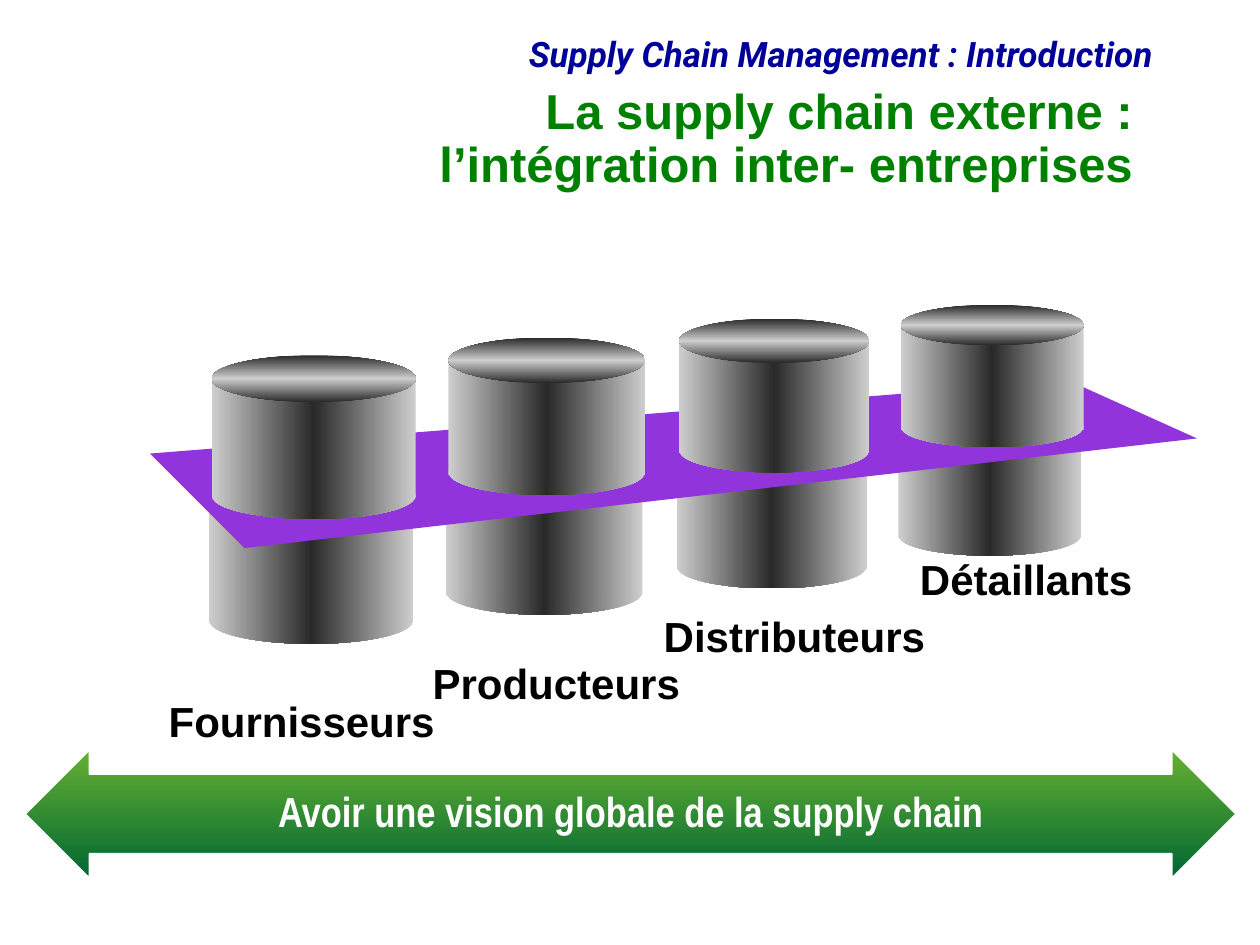
from lxml import etree
from pptx import Presentation
from pptx.dml.color import RGBColor
from pptx.enum import shapes, text
from pptx.oxml import ns
from pptx.util import Inches, Pt

hex_color = RGBColor.from_string
METAL = ["CECECE", "292929", "CECECE"]
METAL_TOP = ["292929", "CECECE", "292929"]


def write_text(shape, content, size=24, font="Arial", color="000000", italic=False,
               align=text.PP_ALIGN.CENTER, anchor=text.MSO_ANCHOR.TOP,
               spacing=None, wrap=True):
    frame = shape.text_frame
    frame.word_wrap = wrap
    frame.auto_size = text.MSO_AUTO_SIZE.NONE
    frame.vertical_anchor = anchor
    frame.text = content
    paragraph = frame.paragraphs[0]
    paragraph.alignment = align
    paragraph.line_spacing = spacing
    for run in paragraph.runs:
        run.font.size = Pt(size)
        run.font.name = font
        run.font.bold = True
        run.font.italic = italic
        run.font.color.rgb = hex_color(color)


def fill_gradient(shape, colors, angle):
    """Spread the colors evenly; the angle runs clockwise in degrees."""
    shape.shadow.inherit = False
    shape.fill.gradient()
    gradient = shape.fill._xPr.find(ns.qn("a:gradFill"))
    stops = gradient.find(ns.qn("a:gsLst"))
    for stop in list(stops):
        stops.remove(stop)
    for i, color in enumerate(colors):
        position = str(100000 * i // (len(colors) - 1))
        stop = etree.SubElement(stops, ns.qn("a:gs"), pos=position)
        etree.SubElement(stop, ns.qn("a:srgbClr"), val=color)
    gradient.find(ns.qn("a:lin")).set("ang", str(angle * 60000))


prs = Presentation()
prs.slide_width, prs.slide_height = Inches(10), Inches(7.5)
slide = prs.slides.add_slide(prs.slide_layouts[5])

# Course header and title
header = slide.shapes.add_textbox(Inches(1.25), Inches(0.25), Inches(8), Inches(0.4))
write_text(header, "Supply Chain Management : Introduction", size=20, font="Roboto",
           color="000099", italic=True, align=text.PP_ALIGN.RIGHT, spacing=0.9)

title = slide.shapes.title
title.left, title.top = Inches(1.17), Inches(1.08)
title.width, title.height = Inches(7.92), Inches(0.5)
write_text(title, "La supply chain externe :\vl’intégration inter- entreprises", size=28,
           color="008000", align=text.PP_ALIGN.RIGHT, anchor=text.MSO_ANCHOR.BOTTOM,
           spacing=0.9)

# Upper cylinders: left, top, width, lid height, body height, drop to the lower one
cylinders = [
    (1.68, 2.82, 1.62, 0.37, 0.95, 0.99),
    (3.56, 2.68, 1.56, 0.36, 0.91, 0.95),
    (5.39, 2.53, 1.51, 0.35, 0.89, 0.92),
    (7.15, 2.42, 1.45, 0.32, 0.83, 0.86),
]
lower = [(left - 0.02, top + drop, width, lid, body)
         for left, top, width, lid, body, drop in reversed(cylinders)]
upper = [cylinder[:5] for cylinder in cylinders]

for layer in (lower, upper):
    # The plane cuts between the two layers
    if layer is upper:
        corners = [(Inches(x), Inches(y))
                   for x, y in [(1.19, 3.6), (8.48, 3.02), (9.5, 3.48), (1.94, 4.35)]]
        outline = slide.shapes.build_freeform(*corners[0])
        outline.add_line_segments(corners[1:], close=True)
        plane = outline.convert_to_shape()
        plane.shadow.inherit = False
        plane.fill.solid()
        plane.fill.fore_color.rgb = hex_color("9234DB")
        plane.line.fill.background()

    for left, top, width, lid, body in layer:
        cylinder = slide.shapes.add_group_shape()
        for kind, y, height, colors, angle in [
            (shapes.MSO_SHAPE.OVAL, top + body - 0.02, lid, METAL, 0),
            (shapes.MSO_SHAPE.RECTANGLE, top + lid / 2, body, METAL, 0),
            (shapes.MSO_SHAPE.OVAL, top, lid, METAL_TOP, 90),
        ]:
            part = cylinder.shapes.add_shape(
                kind, Inches(left), Inches(y), Inches(width), Inches(height))
            fill_gradient(part, colors, angle)
            part.line.fill.background()

# Links of the chain
for name, left, top, width in [
    ("Détaillants", 6.98, 4.34, 2.33),
    ("Producteurs", 3.17, 5.17, 2.49),
    ("Fournisseurs", 1.23, 5.47, 2.33),
    ("Distributeurs", 5.16, 4.8, 2.29),
]:
    link = slide.shapes.add_textbox(Inches(left), Inches(top), Inches(width), Inches(0.5))
    write_text(link, name, wrap=False)

# Global vision arrow
vision = slide.shapes.add_shape(shapes.MSO_SHAPE.LEFT_RIGHT_ARROW,
                                Inches(0.2), Inches(5.95), Inches(9.61), Inches(1.02))
vision.adjustments[0], vision.adjustments[1] = 0.62, 0.5
fill_gradient(vision, ["66B132", "006633"], 90)
vision.line.color.rgb = hex_color("FFFFFF")
vision.line.width = Pt(1)
write_text(vision, "Avoir une vision globale de la supply chain", font="Arial Narrow",
           color="FFFFFF", anchor=text.MSO_ANCHOR.MIDDLE, spacing=0.9, wrap=False)

prs.save("out.pptx")
